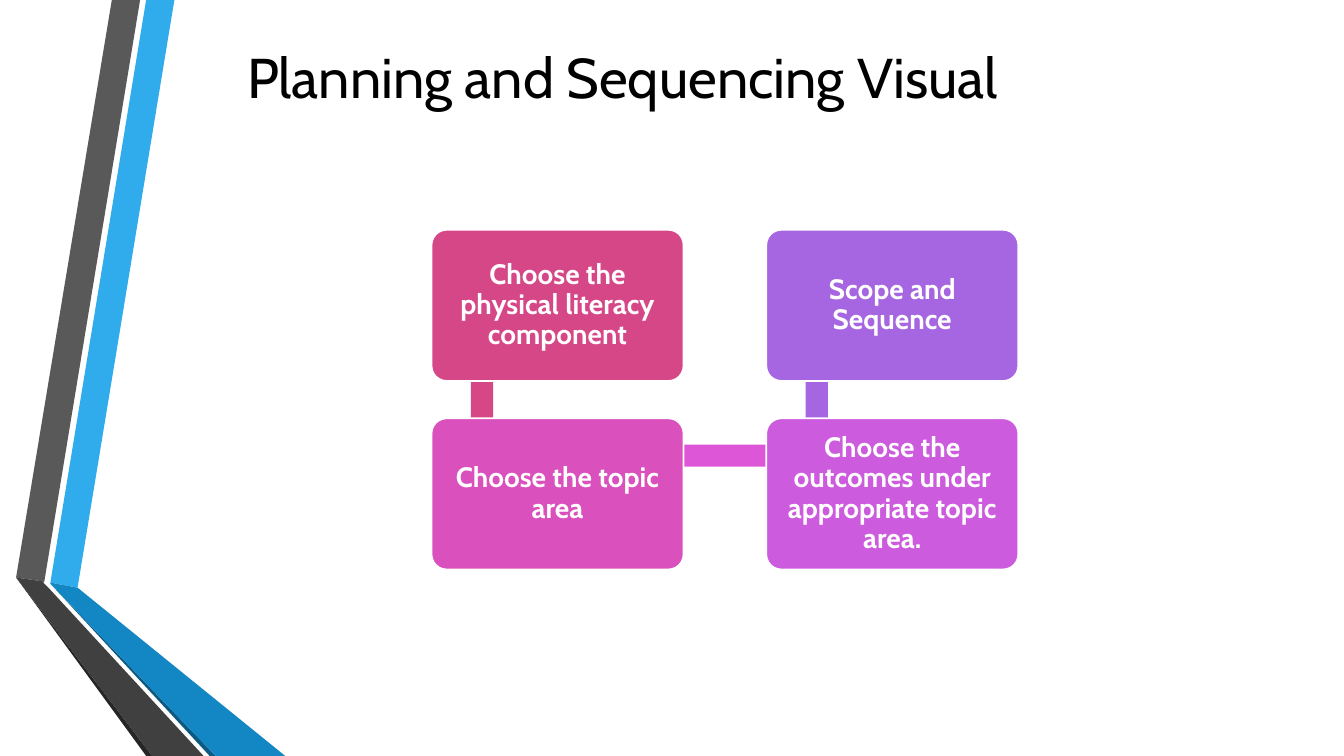
from dataclasses import dataclass

from pptx import Presentation
from pptx.dml.color import RGBColor
from pptx.enum.shapes import MSO_SHAPE
from pptx.enum.text import MSO_ANCHOR, PP_ALIGN
from pptx.util import Pt

RECT = MSO_SHAPE.RECTANGLE
ROUND_RECT = MSO_SHAPE.ROUNDED_RECTANGLE
MIDDLE = MSO_ANCHOR.MIDDLE
CENTER = PP_ALIGN.CENTER
PX = 9144


@dataclass(frozen=True)
class Theme:
    font: str = "Cabin"
    title_size: int = 40
    step_size: int = 20
    outline_width: float = 1.25
    ink: str = "000000"
    white: str = "FFFFFF"
    blue: str = "30ACEC"
    blue_fold: str = "1287C3"
    blue_edge: str = "0C5A82"
    grey: str = "595959"
    grey_fold: str = "404040"
    grey_edge: str = "262626"
    rose: str = "D64787"
    pink: str = "DA51BD"
    orchid: str = "DC56D7"
    magenta: str = "CC5BDE"
    violet: str = "A666E1"


THEME = Theme()

RIBBONS = [
    (THEME.blue, [(50, 578), (77, 583), (173, 0), (145, 0)]),
    (THEME.grey, [(139, 0), (111, 0), (16, 573), (44, 577)]),
    (THEME.grey_edge, [(16, 573), (145, 750), (151, 750)]),
    (THEME.blue_edge, [(50, 579), (208, 750), (214, 750)]),
    (THEME.blue_fold, [(50, 578), (50, 579), (214, 750), (283, 750), (77, 583)]),
    (THEME.grey_fold, [(202, 750), (48, 583), (43, 578), (44, 577), (16, 573), (151, 750)]),
]

STEPS = [
    ("Choose the physical literacy component", 0, 0, THEME.rose, "down", THEME.rose),
    ("Choose the topic area", 0, 1, THEME.pink, "right", THEME.orchid),
    ("Choose the outcomes under appropriate topic area.", 1, 1, THEME.magenta, "up", THEME.violet),
    ("Scope and Sequence", 1, 0, THEME.violet, None, None),
]


def paint(shape, color):
    shape.shadow.inherit = False
    shape.fill.solid()
    shape.fill.fore_color.rgb = RGBColor.from_string(color)
    shape.line.fill.background()


def add_block(slide, kind, box, color):
    block = slide.shapes.add_shape(kind, *(length * PX for length in box))
    paint(block, color)
    return block


def write(frame, text, size, color, bold=False):
    frame.word_wrap = True
    frame.vertical_anchor = MIDDLE
    paragraph = frame.paragraphs[0]
    paragraph.alignment = CENTER
    run = paragraph.add_run()
    run.text = text
    run.font.name = THEME.font
    run.font.size = Pt(size)
    run.font.bold = bold
    run.font.color.rgb = RGBColor.from_string(color)
    return paragraph


def add_ribbons(slide, left, top):
    for color, corners in RIBBONS:
        (start_x, start_y), *others = [(left + x, top + y) for x, y in corners]
        outline = slide.shapes.build_freeform(start_x, start_y, scale=PX)
        outline.add_line_segments(others, close=True)
        paint(outline.convert_to_shape(), color)


def add_title(slide, left, top, width, height):
    title = slide.shapes.add_textbox(left * PX, top * PX, width * PX, height * PX)
    write(title.text_frame, "Planning and Sequencing Visual", THEME.title_size, THEME.ink)


def add_step(slide, left, top, width, height, text, color):
    step = add_block(slide, ROUND_RECT, (left, top, width, height), color)
    step.adjustments[0] = 0.1
    step.line.color.rgb = RGBColor.from_string(THEME.white)
    step.line.width = Pt(THEME.outline_width)
    frame = step.text_frame
    frame.margin_left = frame.margin_right = 8 * PX
    frame.margin_top = frame.margin_bottom = 8 * PX
    paragraph = write(frame, text, THEME.step_size, THEME.white, bold=True)
    paragraph.line_spacing = 0.9
    paragraph.space_after = Pt(7)


def add_sequence(slide, left, top, width, height):
    step_width, step_height, bar = 250, 150, 22
    pitch_x, pitch_y = width - step_width, height - step_height
    for text, column, row, color, direction, bar_color in STEPS:
        x, y = left + column * pitch_x, top + row * pitch_y
        bars = {
            "down": (x + 39, y + 37, bar, pitch_y),
            "right": (x + 51, y + 26, pitch_x, bar),
            "up": (x + 39, y + 37 - pitch_y, bar, pitch_y),
        }
        if direction:
            add_block(slide, RECT, bars[direction], bar_color)
        add_step(slide, x, y, step_width, step_height, text, color)


def main():
    deck = Presentation()
    deck.slide_width, deck.slide_height = 1333 * PX, 750 * PX
    slide = deck.slides.add_slide(deck.slide_layouts[6])
    add_ribbons(slide, 0, 0)
    add_title(slide, 171, 24, 893, 102)
    add_sequence(slide, 428, 228, 582, 337)
    deck.save("out.pptx")


if __name__ == "__main__":
    main()
